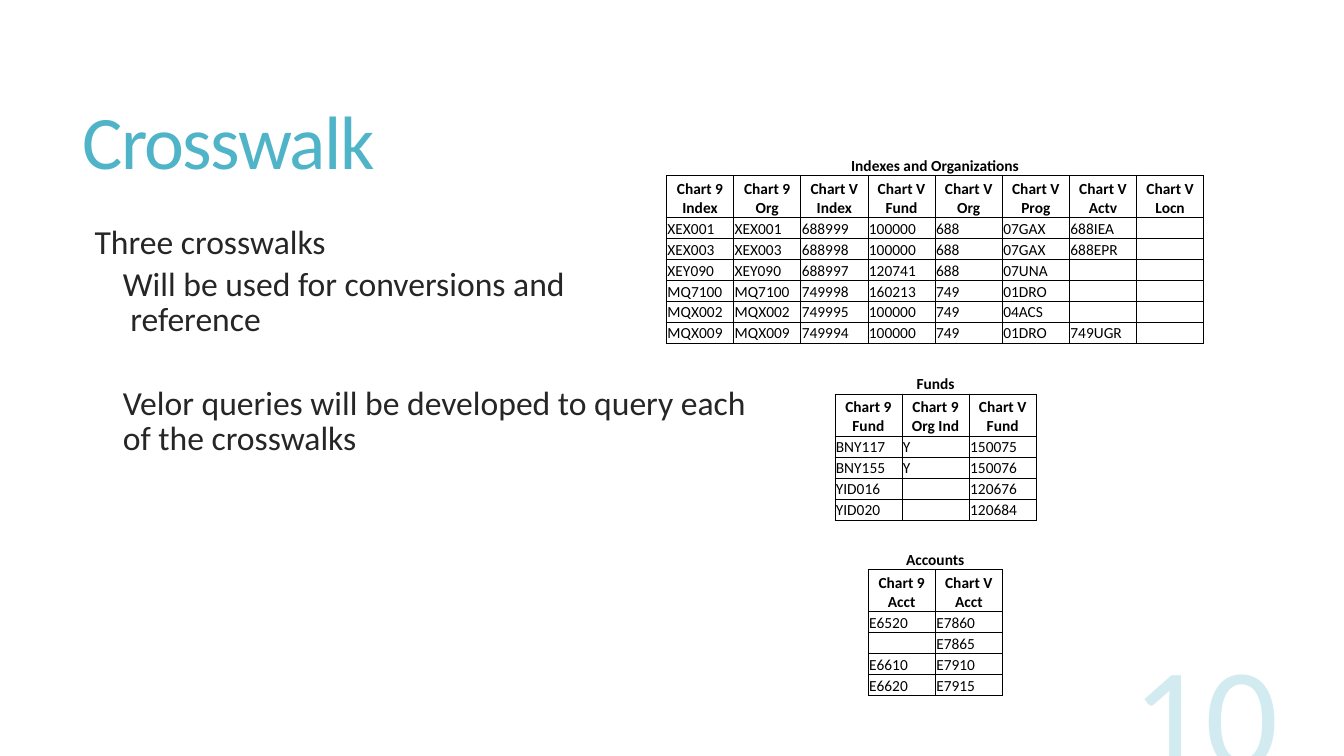
from dataclasses import dataclass

from lxml import etree
from pptx import Presentation
from pptx import util as u
from pptx.dml.color import RGBColor
from pptx.enum import text
from pptx.oxml import ns

FONT = "Calibri"
TEAL, DARK, BLACK, WHITE = "50B4C8", "262626", "000000", "FFFFFF"
ROW_HEIGHT = 0.2086
COLUMN_WIDTH = 0.6665


@dataclass
class Crosswalk:
    title: str
    left: float
    top: float
    headers: list[str]
    rows: list[list[str]]


@dataclass
class BodyParagraph:
    lines: list[str]
    indent: float
    space_before: float


CROSSWALKS = [
    Crosswalk("Accounts", 8.61, 5.44, ["Chart 9 Acct", "Chart V Acct"], [
        ["E6520", "E7860"],
        ["", "E7865"],
        ["E6610", "E7910"],
        ["E6620", "E7915"],
    ]),
    Crosswalk("Funds", 8.28, 3.7, ["Chart 9 Fund", "Chart 9 Org Ind", "Chart V Fund"], [
        ["BNY117", "Y", "150075"],
        ["BNY155", "Y", "150076"],
        ["YID016", "", "120676"],
        ["YID020", "", "120684"],
    ]),
    Crosswalk("Indexes and Organizations", 6.61, 1.53, [
        "Chart 9 Index", "Chart 9 Org", "Chart V Index", "Chart V Fund",
        "Chart V Org", "Chart V Prog", "Chart V Actv", "Chart V Locn",
    ], [
        ["XEX001", "XEX001", "688999", "100000", "688", "07GAX", "688IEA", ""],
        ["XEX003", "XEX003", "688998", "100000", "688", "07GAX", "688EPR", ""],
        ["XEY090", "XEY090", "688997", "120741", "688", "07UNA", "", ""],
        ["MQ7100", "MQ7100", "749998", "160213", "749", "01DRO", "", ""],
        ["MQX002", "MQX002", "749995", "100000", "749", "04ACS", "", ""],
        ["MQX009", "MQX009", "749994", "100000", "749", "01DRO", "749UGR", ""],
    ]),
]

BODY = [
    BodyParagraph(["Three crosswalks"], 0.1, 0),
    BodyParagraph(["Will be used for conversions and", " reference"], 0.38, 6),
    BodyParagraph(["Velor queries will be developed to query each", "of the crosswalks"], 0.38, 36),
]


def color(value: str) -> RGBColor:
    return RGBColor.from_string(value)


def add_run(paragraph, words: str, size: float, fill: str, bold: bool = False):
    run = paragraph.add_run()
    run.text = words
    run.font.name = FONT
    run.font.size = u.Pt(size)
    run.font.bold = bold
    run.font.color.rgb = color(fill)
    return run


def add_frame(slide, left: float, top: float, width: float, height: float, anchor):
    box = slide.shapes.add_textbox(*map(u.Inches, (left, top, width, height)))
    frame = box.text_frame
    frame.word_wrap = True
    frame.vertical_anchor = anchor
    return frame


def set_borders(cell, sides: str) -> None:
    """Draw the named sides (of L, R, T, B) in black and clear the others."""
    properties = cell._tc.get_or_add_tcPr()
    for side in "LRTB":
        line = etree.SubElement(properties, ns.qn(f"a:ln{side}"), w=str(u.Pt(0.5)))
        if side in sides:
            fill = etree.SubElement(line, ns.qn("a:solidFill"))
            etree.SubElement(fill, ns.qn("a:srgbClr"), val=BLACK)
        else:
            etree.SubElement(line, ns.qn("a:noFill"))


def fill_cell(cell, words: str, heading: bool, sides: str) -> None:
    set_borders(cell, sides)
    cell.fill.solid()
    cell.fill.fore_color.rgb = color(WHITE)
    cell.margin_left = cell.margin_right = cell.margin_top = u.Inches(0.01)
    cell.margin_bottom = 0
    cell.vertical_anchor = text.MSO_ANCHOR.BOTTOM
    paragraph = cell.text_frame.paragraphs[0]
    if heading:
        paragraph.alignment = text.PP_ALIGN.CENTER
    if words:
        add_run(paragraph, words, 11, BLACK, heading)
    else:
        # The end mark's size keeps an empty row from growing.
        etree.SubElement(paragraph._p, ns.qn("a:endParaRPr"), sz="1100")


def add_crosswalk(slide, crosswalk: Crosswalk) -> None:
    columns = len(crosswalk.headers)
    title_row = [crosswalk.title] + [""] * (columns - 1)
    grid = [title_row, crosswalk.headers, *crosswalk.rows]
    table = slide.shapes.add_table(
        len(grid), columns, u.Inches(crosswalk.left), u.Inches(crosswalk.top),
        u.Inches(COLUMN_WIDTH * columns), u.Inches(ROW_HEIGHT * (len(grid) + 1)),
    ).table
    table.first_row = table.horz_banding = False
    for column in table.columns:
        column.width = u.Inches(COLUMN_WIDTH)
    for index, values in enumerate(grid):
        table.rows[index].height = u.Inches(ROW_HEIGHT * (2 if index == 1 else 1))
        for position, words in enumerate(values):
            sides = "B" if index == 0 else "LRTB"
            fill_cell(table.cell(index, position), words, index < 2, sides)
    table.cell(0, 0).merge(table.cell(0, columns - 1))


def add_title(slide) -> None:
    frame = add_frame(slide, 0.72, 0.55, 11.78, 1.81, text.MSO_ANCHOR.MIDDLE)
    paragraph = frame.paragraphs[0]
    paragraph.line_spacing = 0.85
    run = add_run(paragraph, "Crosswalk", 54, TEAL)
    run.font._element.set("spc", "-120")


def add_body(slide) -> None:
    frame = add_frame(slide, 0.74, 2.2, 11.76, 4.12, text.MSO_ANCHOR.TOP)
    for index, item in enumerate(BODY):
        paragraph = frame.add_paragraph() if index else frame.paragraphs[0]
        paragraph.line_spacing = 0.85
        paragraph.space_before = u.Pt(item.space_before)
        paragraph._p.get_or_add_pPr().set("marL", str(u.Inches(item.indent)))
        for number, line in enumerate(item.lines):
            if number:
                paragraph.add_line_break()
            add_run(paragraph, line, 24, DARK)


def add_slide_number(slide) -> None:
    frame = add_frame(slide, 9.58, 6.43, 3.2, 1.53, text.MSO_ANCHOR.BOTTOM)
    paragraph = frame.paragraphs[0]
    paragraph.alignment = text.PP_ALIGN.RIGHT
    run = add_run(paragraph, "10", 103, TEAL)
    tint = run.font._element.find(".//" + ns.qn("a:srgbClr"))
    etree.SubElement(tint, ns.qn("a:alpha"), val="25000")


def main() -> None:
    presentation = Presentation()
    presentation.slide_width = u.Inches(13.33)
    presentation.slide_height = u.Inches(7.5)
    slide = presentation.slides.add_slide(presentation.slide_layouts[6])
    add_title(slide)
    add_body(slide)
    add_slide_number(slide)
    for crosswalk in CROSSWALKS:
        add_crosswalk(slide, crosswalk)
    presentation.save("out.pptx")


if __name__ == "__main__":
    main()
